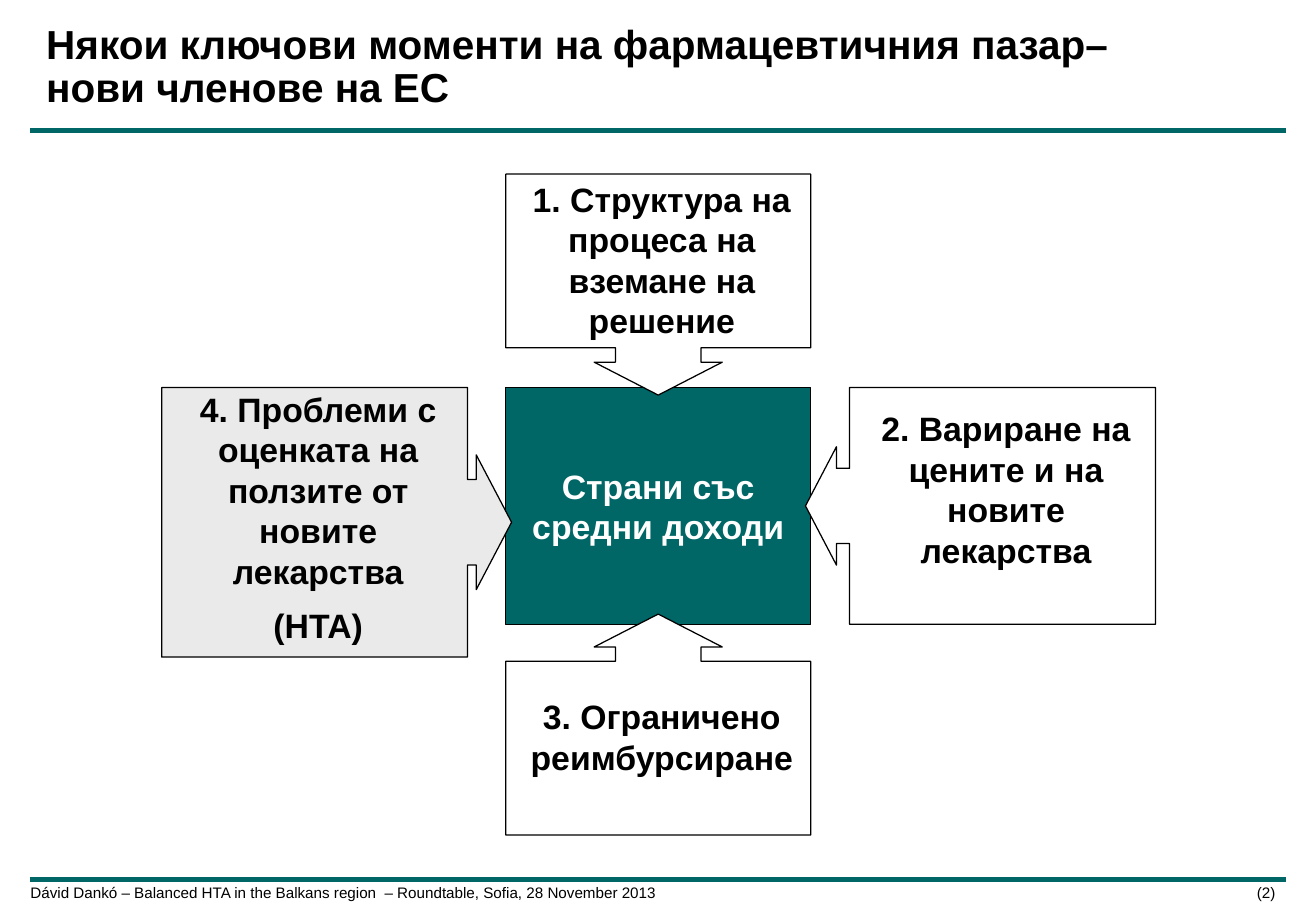
from pptx import Presentation
from pptx.dml.color import RGBColor
from pptx.enum.shapes import MSO_CONNECTOR, MSO_SHAPE
from pptx.enum.text import MSO_ANCHOR, PP_ALIGN
from pptx.oxml.ns import qn
from pptx.util import Pt
from lxml import etree

RECT = MSO_SHAPE.RECTANGLE
DOWN = MSO_SHAPE.DOWN_ARROW_CALLOUT
UP = MSO_SHAPE.UP_ARROW_CALLOUT
LEFT = MSO_SHAPE.LEFT_ARROW_CALLOUT
RIGHT = MSO_SHAPE.RIGHT_ARROW_CALLOUT
TOP, MIDDLE, BOTTOM = MSO_ANCHOR.TOP, MSO_ANCHOR.MIDDLE, MSO_ANCHOR.BOTTOM

THEME = {
    "font": "Arial",
    "teal": RGBColor(0x00, 0x66, 0x66),
    "gray": RGBColor(0xEA, 0xEA, 0xEA),
    "white": RGBColor(0xFF, 0xFF, 0xFF),
    "black": RGBColor(0x00, 0x00, 0x00),
    "title": Pt(24),
    "body": Pt(20),
    "footer": Pt(9),
}


def write(sp, paragraphs, frame, para, font):
    tf = sp.text_frame
    tf.word_wrap = True
    for name, value in frame.items():
        setattr(tf, name, value)
    for i, text in enumerate(paragraphs):
        p = tf.paragraphs[0] if i == 0 else tf.add_paragraph()
        p.text = text
        p.space_before = Pt(8) if i else Pt(0)
        for name, value in para.items():
            setattr(p, name, value)
        for r in p.runs:
            r.font.name = THEME["font"]
            r.font.color.rgb = THEME[font["color"]]
            r.font.size = THEME[font["size"]]
            r.font.bold = font["bold"]


def insets(left, top, right, bottom):
    return {"margin_left": Pt(left), "margin_top": Pt(top),
            "margin_right": Pt(right), "margin_bottom": Pt(bottom)}


prs = Presentation()
prs.slide_width, prs.slide_height = Pt(780), Pt(540)
s = prs.slides.add_slide(prs.slide_layouts[6])

for y in (77.2, 521.4):
    rule = s.shapes.add_connector(MSO_CONNECTOR.STRAIGHT, Pt(18), Pt(y), Pt(762), Pt(y))
    rule.line.color.rgb = THEME["teal"]
    rule.line.width = Pt(3)
    etree.SubElement(rule._element.spPr, qn("a:effectLst"))

title = s.shapes.add_textbox(Pt(27.4), Pt(9), Pt(737.3), Pt(60.1))
write(title, ["Някои ключови моменти на фармацевтичния пазар–\vнови членове на ЕС"],
      {**insets(0, 2.9, 0, 2.9), "vertical_anchor": BOTTOM},
      {"line_spacing": 0.9}, {"color": "black", "size": "title", "bold": True})

footer = s.shapes.add_textbox(Pt(18), Pt(524.9), Pt(746), Pt(10.1))
pPr = footer.text_frame.paragraphs[0]._p.get_or_add_pPr()
tabs = etree.SubElement(pPr, qn("a:tabLst"))
etree.SubElement(tabs, qn("a:tab"), pos=str(Pt(738)), algn="r")
write(footer, ["Dávid Dankó – Balanced HTA in the Balkans region  – Roundtable, Sofia, 28 November 2013\t(2)"],
      insets(0, 0, 0, 0), {"line_spacing": 0.9},
      {"color": "black", "size": "footer", "bold": False})

SIDE = (0.317, 0.25, 0.131, 0.874)
UPRIGHT = (0.387, 0.29, 0.149, 0.786)
BLOCK_W, BLOCK_X, BLOCK_Y = 180.7, 299.8, 229.7
blocks = [
    (RECT, (BLOCK_X, BLOCK_Y, BLOCK_W, 140.4), (), "teal", "white", MIDDLE, 0,
     ["Страни със средни доходи"]),
    (RIGHT, (95.8, BLOCK_Y, 207.4, 159.8), SIDE, "gray", "black", TOP, 0.7,
     ["4. Проблеми с оценката на ползите от новите лекарства", "(HTA)"]),
    (LEFT, (477.4, BLOCK_Y, 207.4, 140.4), SIDE, "white", "black", TOP, 12.2,
     ["2. Вариране на цените и на новите лекарства"]),
    (UP, (BLOCK_X, 364, BLOCK_W, 131), UPRIGHT, "white", "black", TOP, 20.6,
     ["3. Ограничено реимбурсиране"]),
    (DOWN, (BLOCK_X, 103.2, BLOCK_W, 131), UPRIGHT, "white", "black", TOP, 2.5,
     ["1. Структура на процеса на вземане на решение"]),
]
for kind, box, adjustments, fill, color, anchor, inset_top, paragraphs in blocks:
    sp = s.shapes.add_shape(kind, *[Pt(v) for v in box])
    sp.shadow.inherit = False
    for i, value in enumerate(adjustments):
        sp.adjustments[i] = value
    sp.fill.solid()
    sp.fill.fore_color.rgb = THEME[fill]
    sp.line.color.rgb = THEME["black"]
    sp.line.width = Pt(0.75)
    sides = (5.8, 5.8) if kind == RECT else (7.9, 3.6)
    write(sp, paragraphs,
          {**insets(sides[0], inset_top, sides[1], 0), "vertical_anchor": anchor},
          {"alignment": PP_ALIGN.CENTER},
          {"color": color, "size": "body", "bold": True})

prs.save("out.pptx")
